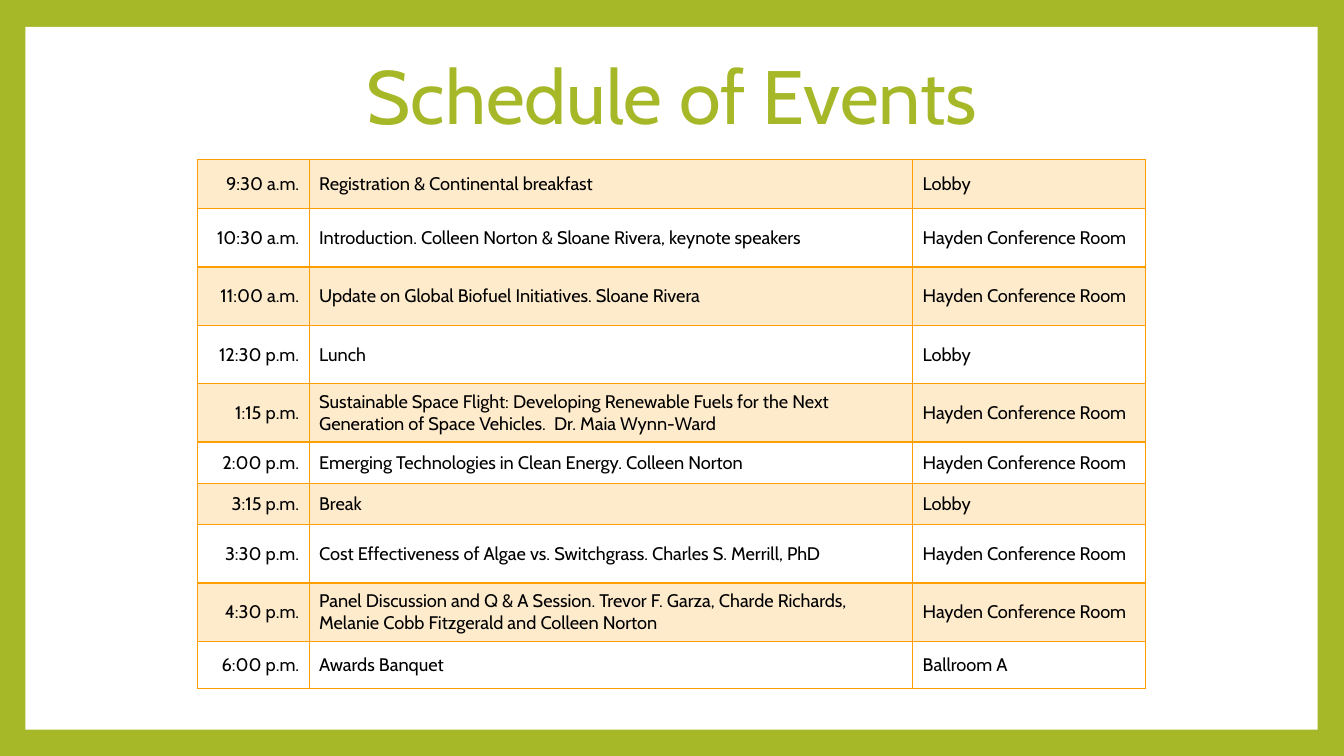
from lxml.etree import SubElement
from pptx import Presentation
from pptx.dml.color import RGBColor as Rgb
from pptx.enum.shapes import MSO_SHAPE as Preset
from pptx.enum.text import MSO_ANCHOR as Anchor, PP_ALIGN as Align
from pptx.oxml.ns import qn
from pptx.util import Cm, Pt

COLORS = {"green": "A6B727", "orange": "FE9E00", "white": "FFFFFF", "black": "000000"}
FONT = "Cabin"
HALL = "Hayden Conference Room"
COLUMN_WIDTHS = [2.82, 15.21, 5.87]
EVENTS = [
    (1.24, "9:30 a.m.", "Registration & Continental breakfast", "Lobby"),
    (1.47, "10:30 a.m.", "Introduction. Colleen Norton & Sloane Rivera, keynote speakers", HALL),
    (1.47, "11:00 a.m.", "Update on Global Biofuel Initiatives. Sloane Rivera", HALL),
    (1.47, "12:30 p.m.", "Lunch", "Lobby"),
    (1.47, "1:15 p.m.", "Sustainable Space Flight: Developing Renewable Fuels for the Next "
     "Generation of Space Vehicles.  Dr. Maia Wynn-Ward", HALL),
    (1.04, "2:00 p.m.", "Emerging Technologies in Clean Energy. Colleen Norton", HALL),
    (1.04, "3:15 p.m.", "Break", "Lobby"),
    (1.47, "3:30 p.m.", "Cost Effectiveness of Algae vs. Switchgrass. Charles S. Merrill, PhD", HALL),
    (1.47, "4:30 p.m.", "Panel Discussion and Q & A Session. Trevor F. Garza, Charde Richards, "
     "Melanie Cobb Fitzgerald and Colleen Norton", HALL),
    (1.19, "6:00 p.m.", "Awards Banquet", "Ballroom A"),
]


def color(name):
    """Return the named colour."""
    return Rgb.from_string(COLORS[name])


def write(frame, text, size, ink, align):
    """Write one centred-in-height paragraph into a text frame."""
    frame.text = text
    frame.word_wrap = True
    frame.vertical_anchor = Anchor.MIDDLE
    line = frame.paragraphs[0]
    line.alignment = align
    font = line.runs[0].font
    font.name, font.size = FONT, Pt(size)
    font.color.rgb = color(ink)
    return line


def add_frame(slide, left, top, width, height):
    """Draw the white page inside the green border."""
    slide.background.fill.solid()
    slide.background.fill.fore_color.rgb = color("green")
    page = slide.shapes.add_shape(Preset.RECTANGLE, Cm(left), Cm(top), Cm(width), Cm(height))
    page.shadow.inherit = False
    page.fill.solid()
    page.fill.fore_color.rgb = color("white")
    page.line.fill.background()


def add_title(slide, left, top, width, height):
    """Place the heading in its box."""
    heading = slide.shapes.add_textbox(Cm(left), Cm(top), Cm(width), Cm(height))
    line = write(heading.text_frame, "Schedule of Events", 54, "green", Align.CENTER)
    line.line_spacing = 0.9


def style_cell(cell, shaded):
    """Give a cell orange borders and, if shaded, a pale orange fill."""
    properties = cell._tc.get_or_add_tcPr()
    for side in ("a:lnL", "a:lnR", "a:lnT", "a:lnB"):
        border = SubElement(properties, qn(side), w=str(Pt(1)))
        solid = SubElement(border, qn("a:solidFill"))
        SubElement(solid, qn("a:srgbClr"), val=COLORS["orange"])
    if shaded:
        cell.fill.solid()
        cell.fill.fore_color.rgb = color("orange")
        tint = properties.find(qn("a:solidFill")).find(qn("a:srgbClr"))
        SubElement(tint, qn("a:alpha"), val="20000")
    else:
        cell.fill.background()


def add_schedule(slide, left, top, width, height):
    """Build the table of times, events and rooms."""
    schedule = slide.shapes.add_table(
        len(EVENTS), len(COLUMN_WIDTHS), Cm(left), Cm(top), Cm(width), Cm(height)).table
    schedule.first_row = schedule.horz_banding = False
    for column, column_width in zip(schedule.columns, COLUMN_WIDTHS):
        column.width = Cm(column_width)
    for index, (row, (row_height, *entries)) in enumerate(zip(schedule.rows, EVENTS)):
        row.height = Cm(row_height)
        for place, (cell, entry) in enumerate(zip(row.cells, entries)):
            align = Align.LEFT if place else Align.RIGHT
            write(cell.text_frame, entry, 13, "black", align)
            cell.vertical_anchor = Anchor.MIDDLE
            style_cell(cell, index % 2 == 0)


def main():
    """Build and save the slide."""
    deck = Presentation()
    deck.slide_width, deck.slide_height = Cm(33.87), Cm(19.05)
    slide = deck.slides.add_slide(deck.slide_layouts[6])
    add_frame(slide, 0.64, 0.68, 32.57, 17.71)
    add_title(slide, 6.65, 0.64, 20.57, 3.76)
    add_schedule(slide, 4.97, 4.02, sum(COLUMN_WIDTHS), sum(event[0] for event in EVENTS))
    deck.save("out.pptx")


if __name__ == "__main__":
    main()
